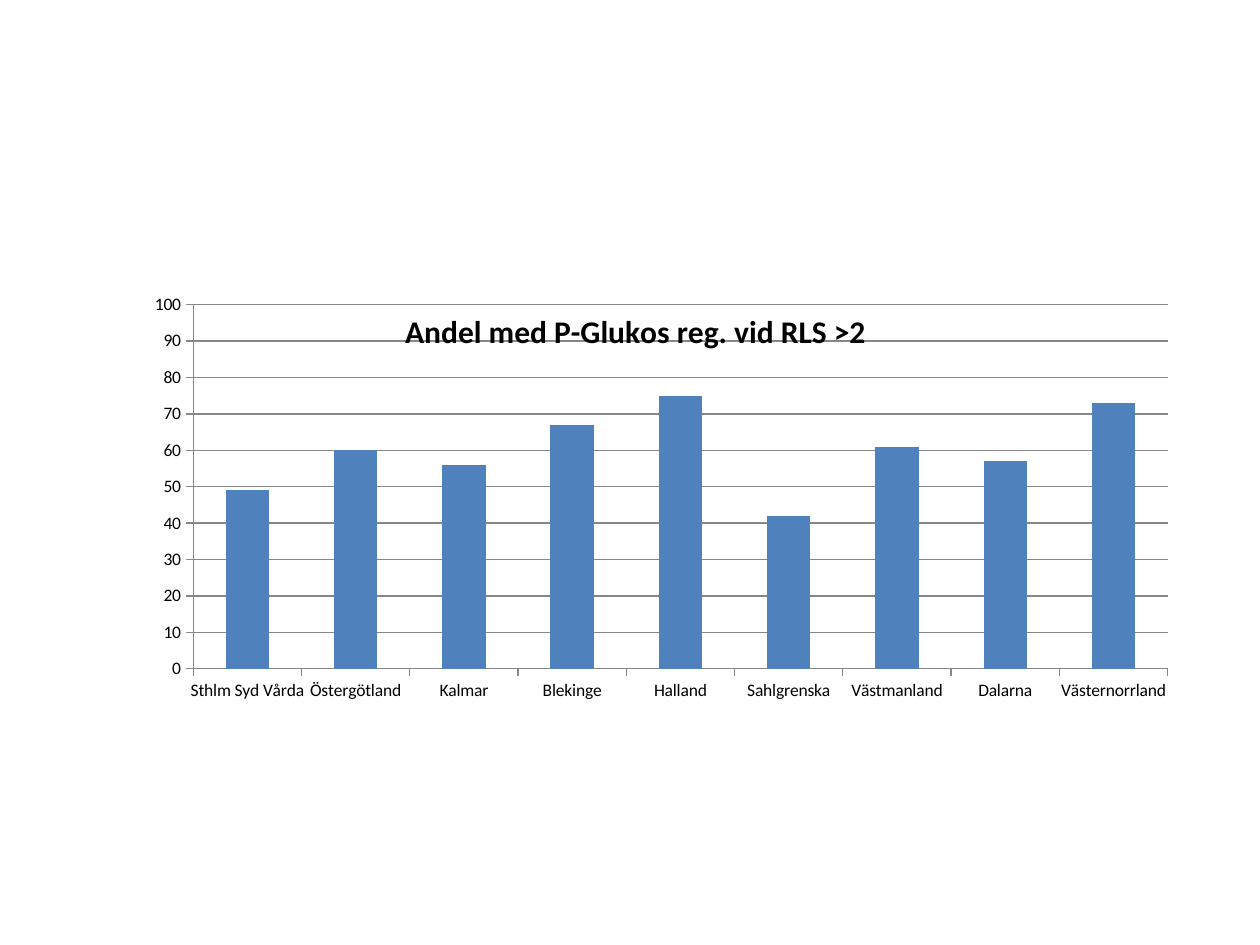
import pptx
import pptx.chart.data
import pptx.dml.color
import pptx.enum.chart
import pptx.oxml
import pptx.oxml.ns
import pptx.util
from pptx.util import Inches

BAR_BLUE = pptx.dml.color.RGBColor(0x4F, 0x81, 0xBD)
GRID_GREY = pptx.dml.color.RGBColor(0x87, 0x87, 0x87)
BLACK = pptx.dml.color.RGBColor(0x00, 0x00, 0x00)

HEADING = "Andel med P-Glukos reg. vid RLS >2"
SHARES = {
    "Sthlm Syd Vårda": 49,
    "Östergötland": 60,
    "Kalmar": 56,
    "Blekinge": 67,
    "Halland": 75,
    "Sahlgrenska": 42,
    "Västmanland": 61,
    "Dalarna": 57,
    "Västernorrland": 73,
}


def apply_format(target, values):
    """Set each named attribute on the target."""
    for name, value in values.items():
        setattr(target, name, value)


def format_font(font, size, bold=False):
    """Give a font its size, weight, typeface and colour."""
    apply_format(font, {"name": "Calibri", "size": pptx.util.Pt(size), "bold": bold})
    font.color.rgb = BLACK


def format_line(line):
    """Draw a thin grey line."""
    line.color.rgb = GRID_GREY
    line.width = pptx.util.Pt(0.75)


def set_layout(parent, index, values):
    """Replace the manual layout of a chart part."""
    for previous in parent.findall(pptx.oxml.ns.qn("c:layout")):
        parent.remove(previous)
    entries = "".join(f'<c:{tag} val="{value}"/>' for tag, value in values.items())
    parent.insert(index, pptx.oxml.parse_xml(
        f'<c:layout {pptx.oxml.ns.nsdecls("c")}>'
        f"<c:manualLayout>{entries}</c:manualLayout></c:layout>"))


def add_share_chart(slide):
    """Add the column chart of shares by region."""
    shares = pptx.chart.data.CategoryChartData(number_format="General")
    shares.categories = list(SHARES)
    shares.add_series("Series 1", list(SHARES.values()))
    chart = slide.shapes.add_chart(
        pptx.enum.chart.XL_CHART_TYPE.COLUMN_CLUSTERED,
        Inches(0.59), Inches(2.19), Inches(8.9), Inches(4.48), shares).chart
    chart.has_legend = False
    format_font(chart.font, 10)
    columns = chart.plots[0]
    apply_format(columns, {"gap_width": 150, "vary_by_categories": False})
    fill = columns.series[0].format.fill
    fill.solid()
    fill.fore_color.rgb = BAR_BLUE
    set_layout(chart.element.find(".//" + pptx.oxml.ns.qn("c:plotArea")), 0, {
        "layoutTarget": "inner", "xMode": "edge", "yMode": "edge",
        "x": 0.106, "y": 0.051, "w": 0.869, "h": 0.645})
    return chart


def format_axes(chart):
    """Set the scale, ticks, lines and labels of both axes."""
    apply_format(chart.value_axis, {
        "minimum_scale": 0, "maximum_scale": 100, "major_unit": 10,
        "has_major_gridlines": True})
    format_line(chart.value_axis.major_gridlines.format.line)
    for axis in (chart.category_axis, chart.value_axis):
        axis.major_tick_mark = pptx.enum.chart.XL_TICK_MARK.OUTSIDE
        format_line(axis.format.line)
        format_font(axis.tick_labels.font, 10)


def add_heading(chart):
    """Lay the chart title over the plot area."""
    chart.has_title = True
    heading = chart.chart_title
    paragraph = heading.text_frame.paragraphs[0]
    paragraph.text = HEADING
    format_font(paragraph.runs[0].font, 18, True)
    set_layout(heading.element, 1, {
        "xMode": "edge", "yMode": "edge", "x": 0.29, "y": 0.05})
    heading.element.find(pptx.oxml.ns.qn("c:overlay")).set("val", "1")


def main():
    """Build and save the slide."""
    deck = pptx.Presentation()
    apply_format(deck, {"slide_width": Inches(10), "slide_height": Inches(7.5)})
    slide = deck.slides.add_slide(deck.slide_layouts[6])
    chart = add_share_chart(slide)
    format_axes(chart)
    add_heading(chart)
    deck.save("out.pptx")


if __name__ == "__main__":
    main()
